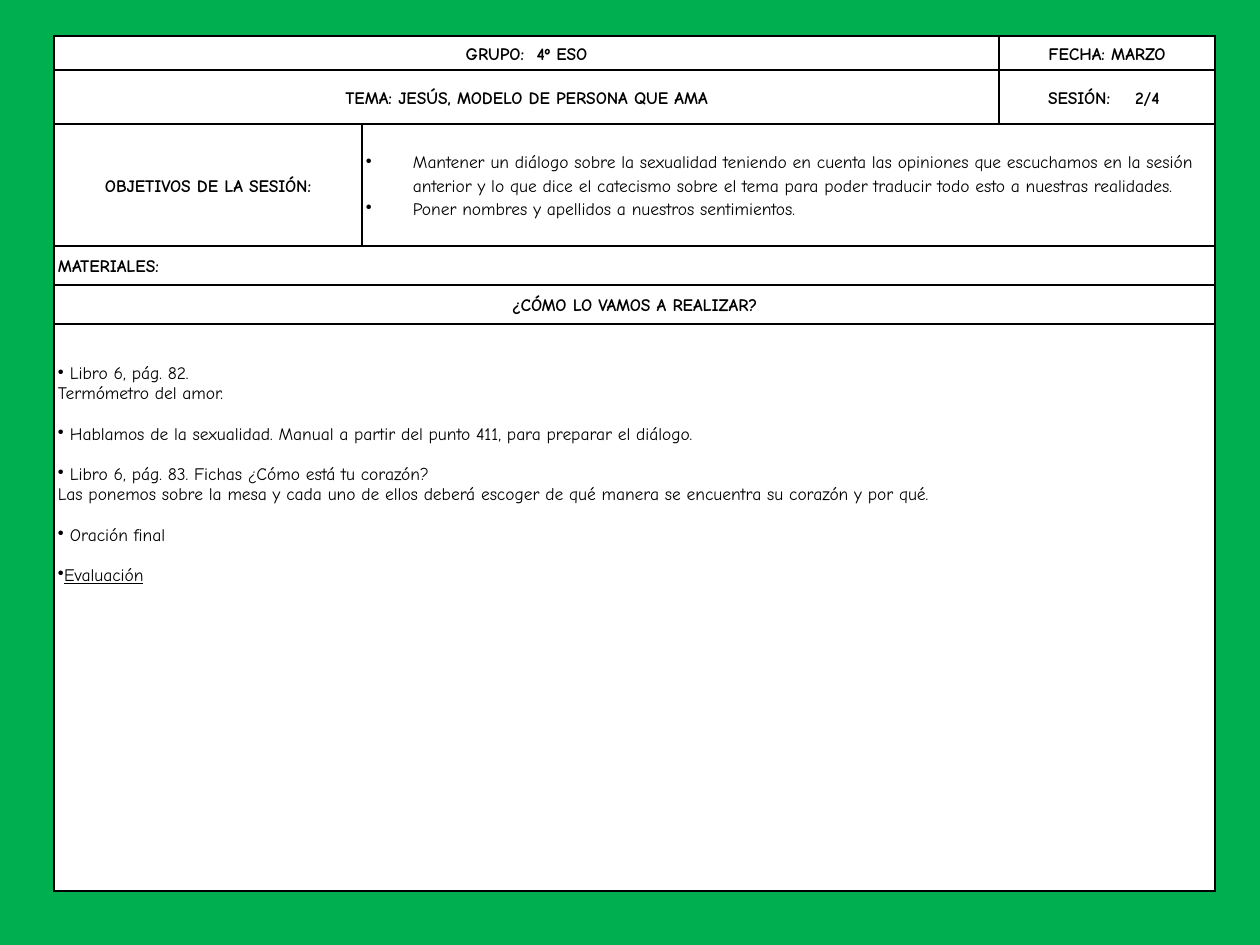
from lxml import etree
from pptx import Presentation
from pptx.dml.color import RGBColor
from pptx.enum.text import MSO_ANCHOR, PP_ALIGN
from pptx.oxml.ns import qn
from pptx.util import Pt

CENTER, LEFT = PP_ALIGN.CENTER, PP_ALIGN.LEFT
MIDDLE, TOP = MSO_ANCHOR.MIDDLE, MSO_ANCHOR.TOP
EMU_PER_PX = 914400 // 126
FONT, TEXT_SIZE = "Comic Neue", 10
BLACK, WHITE, GREEN = "000000", "FFFFFF", "00B050"
COLUMNS = [308, 637, 216]
ROWS = [34, 54, 122, 39, 39, 567]
HANGING = 47
BODY_TOP = 40
GAP = 11.5

HEADINGS = [
    (0, 0, 1, "GRUPO:  4º ESO", CENTER),
    (0, 2, 2, "FECHA: MARZO", CENTER),
    (1, 0, 1, "TEMA: JESÚS, MODELO DE PERSONA QUE AMA", CENTER),
    (1, 2, 2, "SESIÓN:    2/4 ", CENTER),
    (2, 0, 0, "OBJETIVOS DE LA SESIÓN:", CENTER),
    (3, 0, 2, "MATERIALES:", LEFT),
    (4, 0, 2, "¿CÓMO LO VAMOS A REALIZAR?", CENTER),
]
OBJECTIVES = [
    "Mantener un diálogo sobre la sexualidad teniendo en cuenta las opiniones que "
    "escuchamos en la sesión anterior y lo que dice el catecismo sobre el tema para "
    "poder traducir todo esto a nuestras realidades.",
    "Poner nombres y apellidos a nuestros sentimientos.",
]
ACTIVITIES = [
    (" Libro 6, pág. 82.", "Termómetro del amor."),
    (" Hablamos de la sexualidad. Manual a partir del punto 411, para preparar el diálogo.",),
    (" Libro 6, pág. 83. Fichas ¿Cómo está tu corazón?",
     "Las ponemos sobre la mesa y cada uno de ellos deberá escoger de qué manera "
     "se encuentra su corazón y por qué."),
    (" Oración final",),
    ("Evaluación",),
]


def px(length):
    """Turn pixels into EMU."""
    return length * EMU_PER_PX


def color(hex_code):
    """Return the colour for a hex string."""
    return RGBColor.from_string(hex_code)


def style_cell(cell):
    """Give a cell its margins, black borders and white fill."""
    cell.margin_left = cell.margin_right = px(4)
    cell.margin_top = cell.margin_bottom = 0
    properties = cell._tc.get_or_add_tcPr()
    for side in ("lnL", "lnR", "lnT", "lnB"):
        border = etree.SubElement(properties, qn(f"a:{side}"), w=str(Pt(1)))
        border_fill = etree.SubElement(border, qn("a:solidFill"))
        etree.SubElement(border_fill, qn("a:srgbClr"), val=BLACK)
    cell.fill.solid()
    cell.fill.fore_color.rgb = color(WHITE)
    style_text(cell.text_frame.paragraphs[0])


def style_text(paragraph, bold=False):
    """Set the shared font of a paragraph."""
    font = paragraph.font
    font.name, font.size, font.bold = FONT, Pt(TEXT_SIZE), bold
    font.color.rgb = color(BLACK)


def add_bullet(paragraph, hanging=0):
    """Put a bullet before a styled paragraph, with a hanging indent."""
    properties = paragraph._p.get_or_add_pPr()
    properties.set("marL", str(px(hanging)))
    properties.set("indent", str(-px(hanging)))
    bullet = etree.Element(qn("a:buChar"), char="•")
    properties.find(qn("a:defRPr")).addprevious(bullet)


def write_line(cell, text, bold=False, align=LEFT, spacing=None):
    """Write a line into a cell, after any text already there."""
    frame = cell.text_frame
    paragraph = frame.add_paragraph() if frame.text else frame.paragraphs[0]
    paragraph.add_run().text = text
    paragraph.alignment = align
    if spacing:
        paragraph.line_spacing = spacing
    style_text(paragraph, bold)
    return paragraph


def merge_across(table, row, first, last):
    """Merge a stretch of one row and return its leading cell."""
    cell = table.cell(row, first)
    if last > first:
        cell.merge(table.cell(row, last))
    cell.vertical_anchor = MIDDLE
    return cell


def add_session_table(slide):
    """Add the empty session grid."""
    table = slide.shapes.add_table(
        len(ROWS), len(COLUMNS), px(54), px(36), px(sum(COLUMNS)), px(sum(ROWS))
    ).table
    for column, width in zip(table.columns, COLUMNS):
        column.width = px(width)
    for row, height in zip(table.rows, ROWS):
        row.height = px(height)
    table.first_row = table.horz_banding = False
    for cell in table.iter_cells():
        style_cell(cell)
    return table


def fill_objectives(table):
    """Write the bulleted session objectives."""
    cell = merge_across(table, 2, 1, 2)
    for objective in OBJECTIVES:
        add_bullet(write_line(cell, objective, spacing=1.15), HANGING)


def fill_activities(table):
    """Write the activities, ending with the underlined evaluation."""
    cell = merge_across(table, 5, 0, 2)
    cell.vertical_anchor = TOP
    cell.margin_top = px(BODY_TOP)
    for index, (title, *details) in enumerate(ACTIVITIES):
        heading = write_line(cell, title)
        add_bullet(heading)
        if index:
            heading.space_before = Pt(GAP)
        for detail in details:
            write_line(cell, detail)
    heading.font.underline = True


def main():
    """Build and save the session plan."""
    presentation = Presentation()
    presentation.slide_width, presentation.slide_height = px(1260), px(945)
    slide = presentation.slides.add_slide(presentation.slide_layouts[6])
    slide.background.fill.solid()
    slide.background.fill.fore_color.rgb = color(GREEN)
    table = add_session_table(slide)
    for row, first, last, text, align in HEADINGS:
        write_line(merge_across(table, row, first, last), text, True, align, 1.15)
    fill_objectives(table)
    fill_activities(table)
    presentation.save("out.pptx")


if __name__ == "__main__":
    main()
